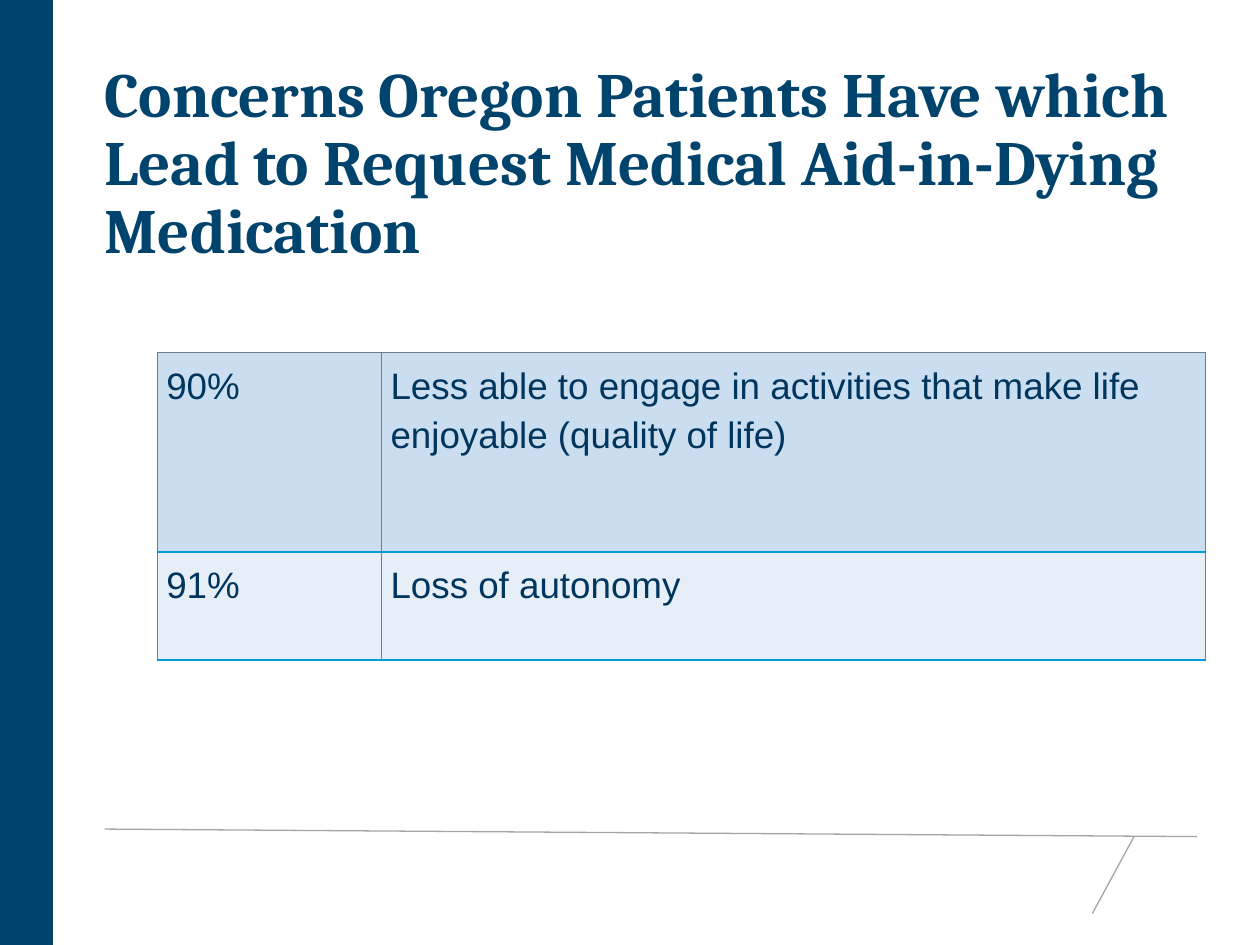
"""Build a slide on the concerns behind requests for aid-in-dying medication."""
import pptx
import pptx.dml.color
import pptx.enum.shapes
import pptx.enum.text
import pptx.oxml
import pptx.oxml.ns
import pptx.util
from pptx.util import Inches

NAVY = "00446D"
TEXT = "00365E"
BLUE = "009ED6"
SLATE = "6B7F90"
GRAY = "A5A5A5"
CONCERNS = [
    ("90%", "Less able to engage in activities that make life enjoyable (quality of life)"),
    ("91%", "Loss of autonomy"),
]


def color(value):
    return pptx.dml.color.RGBColor.from_string(value)


class SlideBuilder:
    def __init__(self, slide):
        self.slide = slide
        self.title_font = "Cambria"
        self.body_font = "Arial"

    def add_text(self, frame, text, font, size, fill, spacing, bold=False):
        paragraph = frame.paragraphs[0]
        paragraph.alignment = pptx.enum.text.PP_ALIGN.LEFT
        paragraph.line_spacing = spacing
        run = paragraph.add_run()
        run.text = text
        run.font.name = font
        run.font.size = pptx.util.Pt(size)
        run.font.bold = bold
        run.font.color.rgb = color(fill)

    def bar(self, left, top, width, height, fill):
        shape = self.slide.shapes.add_shape(
            pptx.enum.shapes.MSO_SHAPE.RECTANGLE,
            Inches(left), Inches(top), Inches(width), Inches(height))
        shape.shadow.inherit = False
        shape.fill.solid()
        shape.fill.fore_color.rgb = color(fill)
        shape.line.fill.background()

    def line(self, start, end):
        connector = self.slide.shapes.add_connector(
            pptx.enum.shapes.MSO_CONNECTOR.STRAIGHT,
            *[Inches(value) for value in (*start, *end)])
        connector.line.color.rgb = color(GRAY)
        connector.line.width = pptx.util.Pt(0.75)
        properties = connector._element.spPr
        properties.append(pptx.oxml.parse_xml(
            f'<a:effectLst {pptx.oxml.ns.nsdecls("a")}/>'))

    def title(self, text, left, top, width, height):
        title = self.slide.shapes.title
        title.left, title.top = Inches(left), Inches(top)
        title.width, title.height = Inches(width), Inches(height)
        frame = title.text_frame
        frame.margin_left = frame.margin_right = frame.margin_top = frame.margin_bottom = 0
        frame.word_wrap = True
        frame.auto_size = pptx.enum.text.MSO_AUTO_SIZE.NONE
        frame.vertical_anchor = pptx.enum.text.MSO_ANCHOR.TOP
        self.add_text(frame, text, self.title_font, 36, NAVY, 0.9, bold=True)

    def border(self, cell, side, value, points):
        cell._tc.get_or_add_tcPr().append(pptx.oxml.parse_xml(
            f'<a:ln{side} {pptx.oxml.ns.nsdecls("a")} w="{pptx.util.Pt(points)}">'
            f'<a:solidFill><a:srgbClr val="{value}"/></a:solidFill></a:ln{side}>'))

    def table(self, rows, left, top, widths, heights, fills):
        table = self.slide.shapes.add_table(
            len(rows), len(widths), Inches(left), Inches(top),
            Inches(sum(widths)), Inches(sum(heights))).table
        for column, width in zip(table.columns, widths):
            column.width = Inches(width)
        for index, texts in enumerate(rows):
            table.rows[index].height = Inches(heights[index])
            for cell, text in zip(table.rows[index].cells, texts):
                cell.margin_left = cell.margin_right = Inches(0.07)
                cell.margin_top = cell.margin_bottom = Inches(0.04)
                self.border(cell, "L", SLATE, 0.5)
                self.border(cell, "R", SLATE, 0.5)
                self.border(cell, "T", BLUE if index else SLATE, 1 if index else 0.5)
                self.border(cell, "B", BLUE, 1)
                cell.fill.solid()
                cell.fill.fore_color.rgb = color(fills[index])
                self.add_text(cell.text_frame, text, self.body_font, 21, TEXT, 1.2)


def main():
    presentation = pptx.Presentation()
    presentation.slide_width = Inches(10)
    presentation.slide_height = Inches(7.5)
    slide = presentation.slides.add_slide(presentation.slide_layouts[5])
    builder = SlideBuilder(slide)
    builder.line((0.83, 6.58), (9.5, 6.64))
    builder.line((8.67, 7.25), (9, 6.64))
    builder.bar(0, 0, 0.42, 7.5, NAVY)
    builder.title(
        "Concerns Oregon Patients Have which Lead to Request Medical Aid-in-Dying Medication",
        0.83, 0.5, 8.67, 1.65)
    builder.table(CONCERNS, 1.25, 2.8, [1.78, 6.54], [1.58, 0.86], ["CADEF0", "E6EFF7"])
    presentation.save("out.pptx")


if __name__ == "__main__":
    main()
